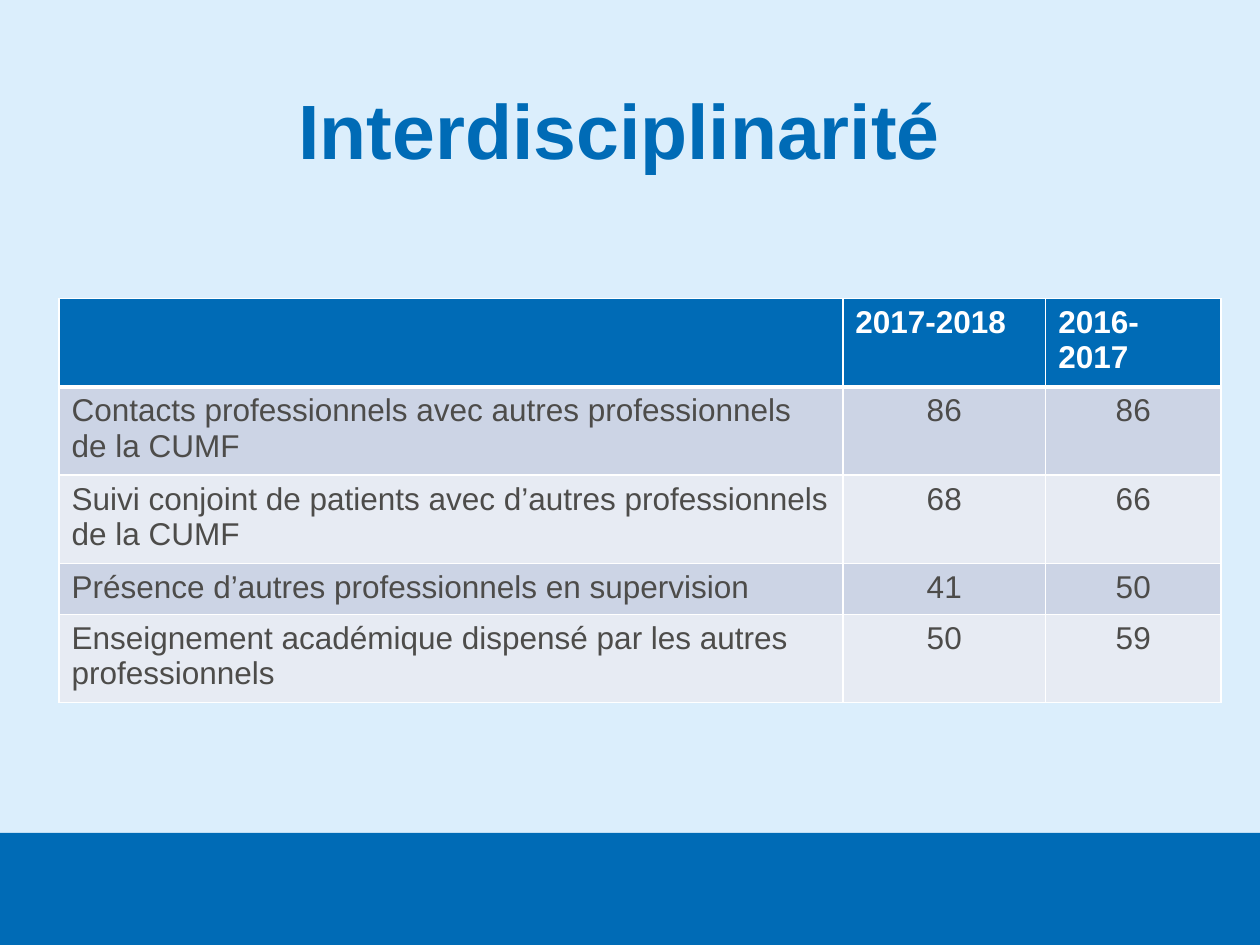
from lxml.etree import SubElement
from pptx import Presentation
from pptx.dml.color import RGBColor
from pptx.enum.shapes import MSO_SHAPE as Shape
from pptx.enum.text import MSO_ANCHOR as Anchor, PP_ALIGN as Align
from pptx.oxml.ns import qn
from pptx.util import Cm, Pt

COLORS = {
    "background": "DBEEFC",
    "blue": "006BB6",
    "white": "FFFFFF",
    "text": "4D4C4A",
    "odd_row": "CCD4E5",
    "even_row": "E7EBF3",
}
HEADER = ["", "2017-2018", "2016-2017"]
ROWS = [
    ["Contacts professionnels avec autres professionnels de la CUMF", "86", "86"],
    ["Suivi conjoint de patients avec d’autres professionnels de la CUMF", "68", "66"],
    ["Présence d’autres professionnels en supervision", "41", "50"],
    ["Enseignement académique dispensé par les autres professionnels", "50", "59"],
]
COLUMN_WIDTHS = [15.8, 4.09, 3.53]
ROW_HEIGHT = 1.03


def color(name):
    return RGBColor.from_string(COLORS[name])


def write(frame, text, size=18, ink="text", bold=False, align=Align.LEFT, spacing=1.0):
    paragraph = frame.paragraphs[0]
    paragraph.alignment = align
    paragraph.line_spacing = spacing
    paragraph.font.size = Pt(size)
    if text:
        run = paragraph.add_run()
        run.text = text
        run.font.name = "Arial"
        run.font.size = Pt(size)
        run.font.bold = bold
        run.font.color.rgb = color(ink)


class SlideBuilder:
    def __init__(self, slide):
        self.slide = slide
        slide.background.fill.solid()
        slide.background.fill.fore_color.rgb = color("background")

    def bar(self, left, top, width, height, fill):
        shape = self.slide.shapes.add_shape(
            Shape.RECTANGLE, Cm(left), Cm(top), Cm(width), Cm(height))
        shape.shadow.inherit = False
        shape.fill.solid()
        shape.fill.fore_color.rgb = color(fill)
        shape.line.fill.background()

    def title(self, left, top, width, height, text):
        frame = self.slide.shapes.add_textbox(
            Cm(left), Cm(top), Cm(width), Cm(height)).text_frame
        frame.word_wrap = True
        frame.vertical_anchor = Anchor.BOTTOM
        frame.margin_right = Cm(0.68)
        frame.margin_bottom = Cm(1.96)
        write(frame, text, size=44, ink="blue", bold=True, align=Align.CENTER, spacing=0.9)

    def borders(self, cell, widths):
        properties = cell._tc.get_or_add_tcPr()
        for side, width in widths.items():
            line = SubElement(properties, qn(f"a:ln{side}"), w=str(Pt(width)))
            fill = SubElement(line, qn("a:solidFill"))
            SubElement(fill, qn("a:srgbClr"), val=COLORS["white"])

    def table(self, left, top, widths, row_height, header, rows):
        records = [header, *rows]
        table = self.slide.shapes.add_table(
            len(records), len(widths), Cm(left), Cm(top),
            Cm(sum(widths)), Cm(row_height * len(records))).table
        for column, width in zip(table.columns, widths):
            column.width = Cm(width)
        for row_index, record in enumerate(records):
            table.rows[row_index].height = Cm(row_height)
            is_header = row_index == 0
            fill = "blue" if is_header else ("even_row", "odd_row")[row_index % 2]
            sides = {"L": 1, "R": 1, "T": 1, "B": 3} if is_header else {"L": 1, "R": 1, "B": 1}
            for column_index, text in enumerate(record):
                cell = table.cell(row_index, column_index)
                self.borders(cell, sides)
                cell.fill.solid()
                cell.fill.fore_color.rgb = color(fill)
                centered = column_index > 0 and not is_header
                write(cell.text_frame, text, ink="white" if is_header else "text",
                      bold=is_header, align=Align.CENTER if centered else Align.LEFT)


def main():
    presentation = Presentation()
    presentation.slide_width, presentation.slide_height = Cm(25.4), Cm(19.05)
    builder = SlideBuilder(presentation.slides.add_slide(presentation.slide_layouts[6]))
    builder.bar(0, 16.79, 25.4, 2.26, "blue")
    builder.title(1.98, 1.78, 21.46, 3.73, "Interdisciplinarité")
    builder.table(1.19, 6.02, COLUMN_WIDTHS, ROW_HEIGHT, HEADER, ROWS)
    presentation.save("out.pptx")


if __name__ == "__main__":
    main()
